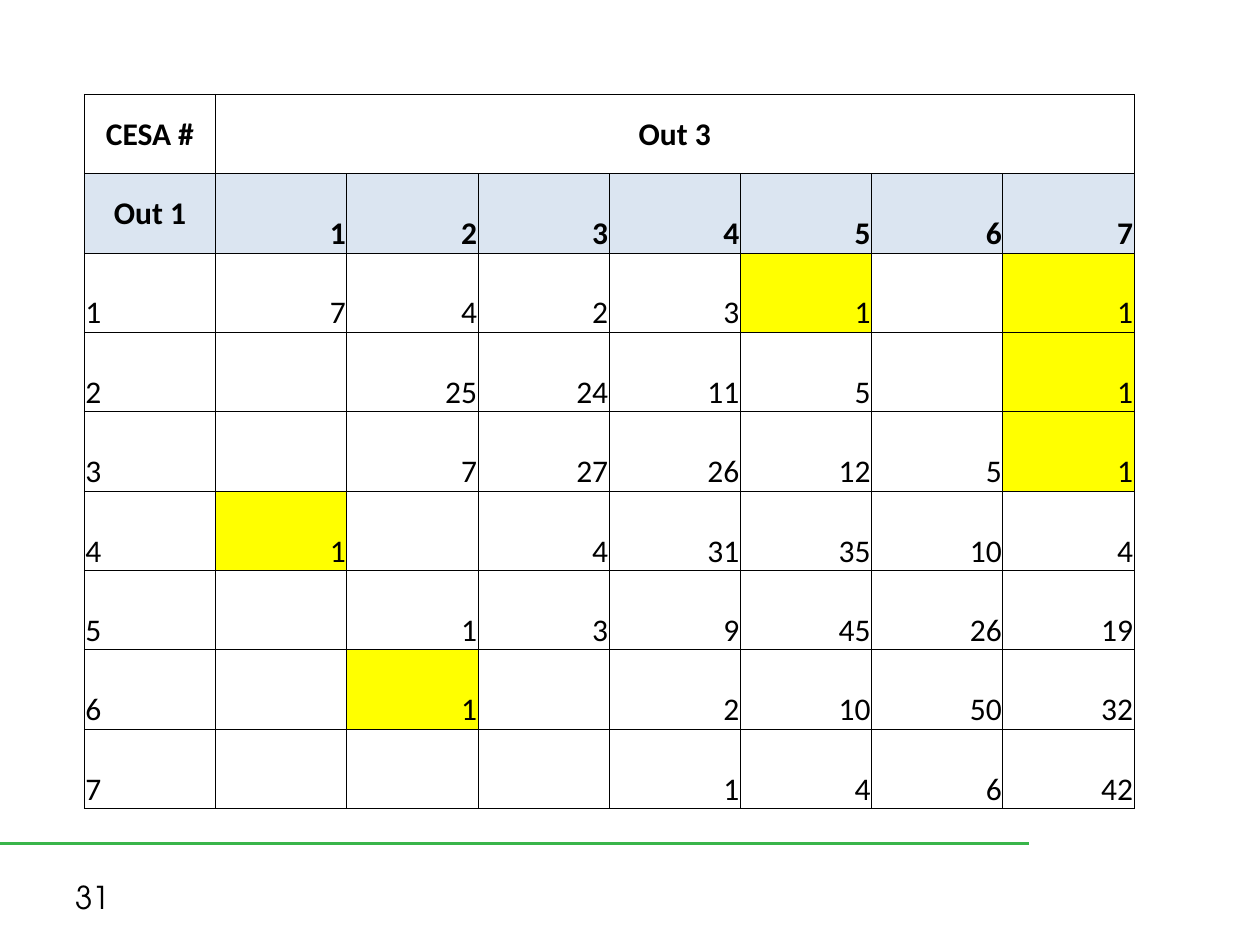
from lxml.etree import SubElement
from pptx import Presentation
from pptx.dml.color import RGBColor
from pptx.enum.shapes import MSO_CONNECTOR
from pptx.enum.text import MSO_ANCHOR as ANCHOR, PP_ALIGN as ALIGN
from pptx.oxml.ns import qn
from pptx.util import Cm, Pt

COLORS = {"text": "000000", "border": "000000", "rule": "39B54A",
          "header": "DBE5F1", "highlight": "FFFF00", "plain": "FFFFFF"}

ROWS = [
    ["CESA #", "Out 3", "", "", "", "", "", ""],
    ["Out 1", 1, 2, 3, 4, 5, 6, 7],
    [1, 7, 4, 2, 3, 1, "", 1],
    [2, "", 25, 24, 11, 5, "", 1],
    [3, "", 7, 27, 26, 12, 5, 1],
    [4, 1, "", 4, 31, 35, 10, 4],
    [5, "", 1, 3, 9, 45, 26, 19],
    [6, "", 1, "", 2, 10, 50, 32],
    [7, "", "", "", 1, 4, 6, 42],
]
HIGHLIGHTS = {(1, 5), (1, 7), (2, 7), (3, 7), (4, 1), (6, 2)}


def rgb(name):
    return RGBColor.from_string(COLORS[name])


def style_text(p, font, bold=False):
    p.font.name = font
    p.font.size = Pt(18)
    p.font.bold = bold
    p.font.color.rgb = rgb("text")


def add_borders(cell):
    tc_pr = cell._tc.get_or_add_tcPr()
    for side in ("lnL", "lnR", "lnT", "lnB"):
        ln = SubElement(tc_pr, qn(f"a:{side}"), w=str(Pt(0.5)))
        fill = SubElement(ln, qn("a:solidFill"))
        SubElement(fill, qn("a:srgbClr"), val=COLORS["border"])


def format_cell(cell, row, col, value):
    add_borders(cell)
    cell.margin_left = cell.margin_right = cell.margin_top = Cm(0.02)
    cell.margin_bottom = 0
    is_label = row == 0 or (row, col) == (1, 0)
    cell.vertical_anchor = ANCHOR.MIDDLE if is_label else ANCHOR.BOTTOM
    if row == 1:
        color = "header"
    elif (row - 1, col) in HIGHLIGHTS:
        color = "highlight"
    else:
        color = "plain"
    cell.fill.solid()
    cell.fill.fore_color.rgb = rgb(color)
    p = cell.text_frame.paragraphs[0]
    p.text = str(value)
    p.alignment = ALIGN.CENTER if is_label else ALIGN.RIGHT if col else ALIGN.LEFT
    style_text(p, "Calibri", bold=row < 2)


def add_crosstab(slide, left, top, width, height):
    n_rows, n_cols = len(ROWS), len(ROWS[0])
    table = slide.shapes.add_table(n_rows, n_cols, left, top, width, height).table
    for column in table.columns:
        column.width = width // n_cols
    for row in table.rows:
        row.height = height // n_rows
    for r, values in enumerate(ROWS):
        for c, value in enumerate(values):
            format_cell(table.cell(r, c), r, c, value)
    table.cell(0, 1).merge(table.cell(0, n_cols - 1))


def add_footer(slide, left, top, width, number):
    line = slide.shapes.add_connector(MSO_CONNECTOR.STRAIGHT, left, top, left + width, top)
    line.line.color.rgb = rgb("rule")
    line.line.width = Pt(1.5)
    SubElement(line._element.spPr, qn("a:effectLst"))
    sp = slide.shapes.add_textbox(left + Cm(1.27), top + Cm(0.58), Cm(5.92), Cm(1.02))
    tf = sp.text_frame
    tf.word_wrap = True
    tf.vertical_anchor = ANCHOR.MIDDLE
    p = tf.paragraphs[0]
    p.text = number
    style_text(p, "TeX Gyre Adventor")


def main():
    prs = Presentation()
    prs.slide_width, prs.slide_height = Cm(25.4), Cm(19.05)
    slide = prs.slides.add_slide(prs.slide_layouts[6])
    add_footer(slide, Cm(0), Cm(17), Cm(20.75), "31")
    add_crosstab(slide, Cm(1.7), Cm(1.9), Cm(21.16), Cm(14.4))
    prs.save("out.pptx")


if __name__ == "__main__":
    main()
